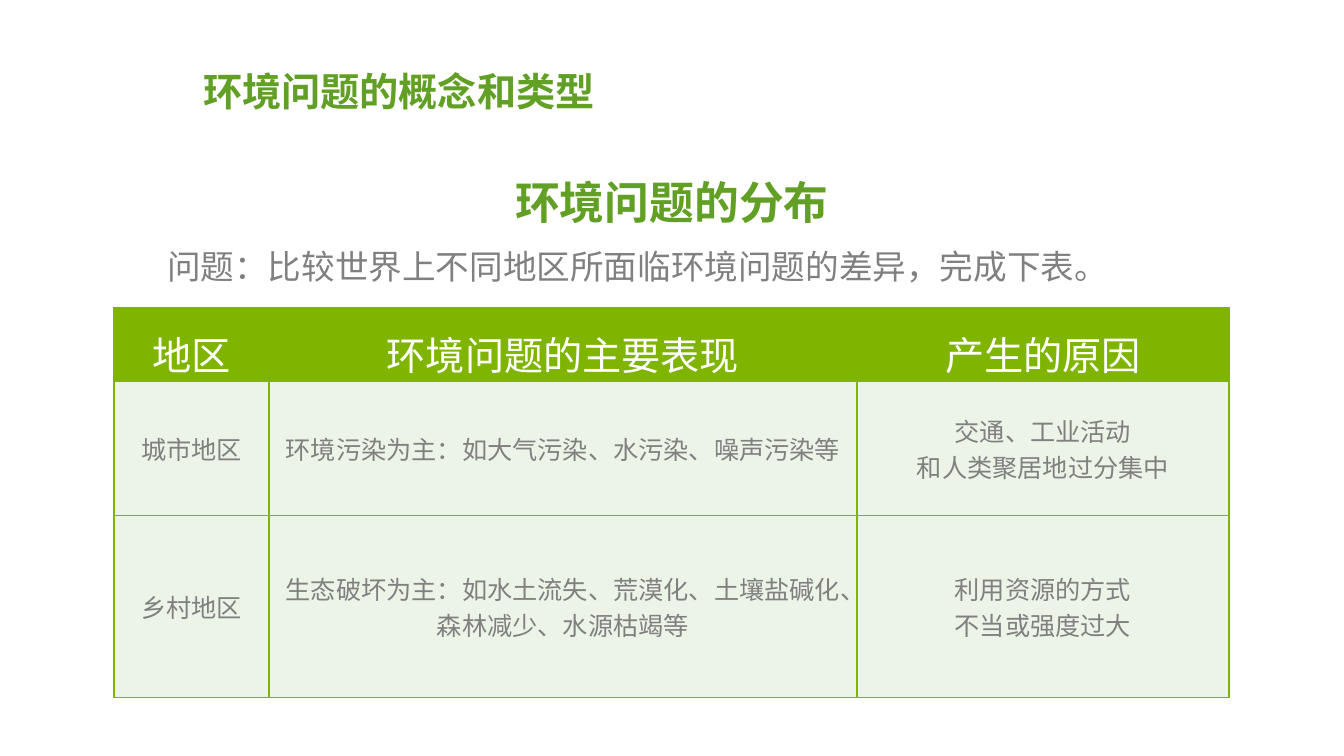
from pptx import Presentation
from pptx.dml.color import RGBColor
from pptx.enum.text import MSO_ANCHOR, MSO_AUTO_SIZE, PP_ALIGN
from pptx.oxml import parse_xml
from pptx.oxml.ns import nsdecls
from pptx.util import Pt

PX = 12192000 // 1344
SCALE = 12192000 / 1344
LEFT, CENTER = PP_ALIGN.LEFT, PP_ALIGN.CENTER
TOP, MIDDLE = MSO_ANCHOR.TOP, MSO_ANCHOR.MIDDLE
NO_AUTOSIZE = MSO_AUTO_SIZE.NONE
GREEN = RGBColor(0x61, 0xA0, 0x24)
LIME = RGBColor(0x7F, 0xB5, 0x00)
PALE = RGBColor(0xEC, 0xF3, 0xE7)
GRAY = RGBColor(0x80, 0x80, 0x80)
WHITE = RGBColor(0xFF, 0xFF, 0xFF)
CJK_FONT = "Noto Sans CJK SC"


def px(*lengths):
    return [round(length * SCALE) for length in lengths]


def write(frame, text, size, color, font="Arial", bold=False, align=CENTER, spacing=1.3):
    for index, line in enumerate(text.split("\n")):
        paragraph = frame.paragraphs[0] if index == 0 else frame.add_paragraph()
        paragraph.alignment = align
        paragraph.line_spacing = spacing
        paragraph.space_before = Pt(0)
        run = paragraph.add_run()
        run.text = line
        run.font.size = Pt(size)
        run.font.bold = bold
        run.font.name = font
        run.font.color.rgb = color
        run.font._element.append(parse_xml(f'<a:ea {nsdecls("a")} typeface="{CJK_FONT}"/>'))


presentation = Presentation()
presentation.slide_width, presentation.slide_height = px(1344, 756)
slide = presentation.slides.add_slide(presentation.slide_layouts[5])

title = slide.shapes.title
title.left, title.top, title.width, title.height = px(193, 48, 416, 66)
title.text_frame.word_wrap = False
title.text_frame.auto_size = NO_AUTOSIZE
title.text_frame.vertical_anchor = TOP
write(title.text_frame, "环境问题的概念和类型", 28, GREEN, bold=True, align=LEFT)
title_fill = title.text_frame.paragraphs[0].runs[0].font.fill
title_fill.gradient()
title_fill.gradient_angle = 270
for stop, color in zip(title_fill.gradient_stops, (GREEN, LIME)):
    stop.color.rgb = color

COLUMN_WIDTHS = (155, 588, 372)
ROW_HEIGHTS = (72, 134, 182)
ROWS = (
    ("地区", "环境问题的主要表现", "产生的原因"),
    ("城市地区", "环境污染为主：如大气污染、水污染、噪声污染等", "交通、工业活动\n和人类聚居地过分集中"),
    ("乡村地区", "生态破坏为主：如水土流失、荒漠化、土壤盐碱化、森林减少、水源枯竭等", "利用资源的方式\n不当或强度过大"),
)
table = slide.shapes.add_table(
    len(ROWS), len(COLUMN_WIDTHS), *px(114, 308, sum(COLUMN_WIDTHS), sum(ROW_HEIGHTS))
).table
for column, width in zip(table.columns, px(*COLUMN_WIDTHS)):
    column.width = width
for row, height, texts in zip(table.rows, px(*ROW_HEIGHTS), ROWS):
    row.height = height
    is_header = texts is ROWS[0]
    for cell, text in zip(row.cells, texts):
        cell.vertical_anchor = MIDDLE
        cell.margin_top = cell.margin_bottom = 0
        if is_header:
            write(cell.text_frame, text, 28, WHITE, font=CJK_FONT)
        else:
            write(cell.text_frame, text, 18, GRAY, spacing=1.0)
        properties = cell._tc.get_or_add_tcPr()
        for side in ("lnL", "lnR", "lnT", "lnB"):
            properties.append(parse_xml(
                f'<a:{side} {nsdecls("a")} w="12700"><a:solidFill>'
                f'<a:srgbClr val="{LIME}"/></a:solidFill></a:{side}>'
            ))
        cell.fill.solid()
        cell.fill.fore_color.rgb = LIME if is_header else PALE

for text, box, size, color, bold in (
    ("环境问题的分布", (353, 154, 638, 74), 32, GREEN, True),
    ("问题：比较世界上不同地区所面临环境问题的差异，完成下表。", (114, 229, 1047, 57), 24, GRAY, False),
):
    frame = slide.shapes.add_textbox(*px(*box)).text_frame
    frame.word_wrap = True
    frame.vertical_anchor = TOP
    write(frame, text, size, color, bold=bold)

presentation.save("out.pptx")
